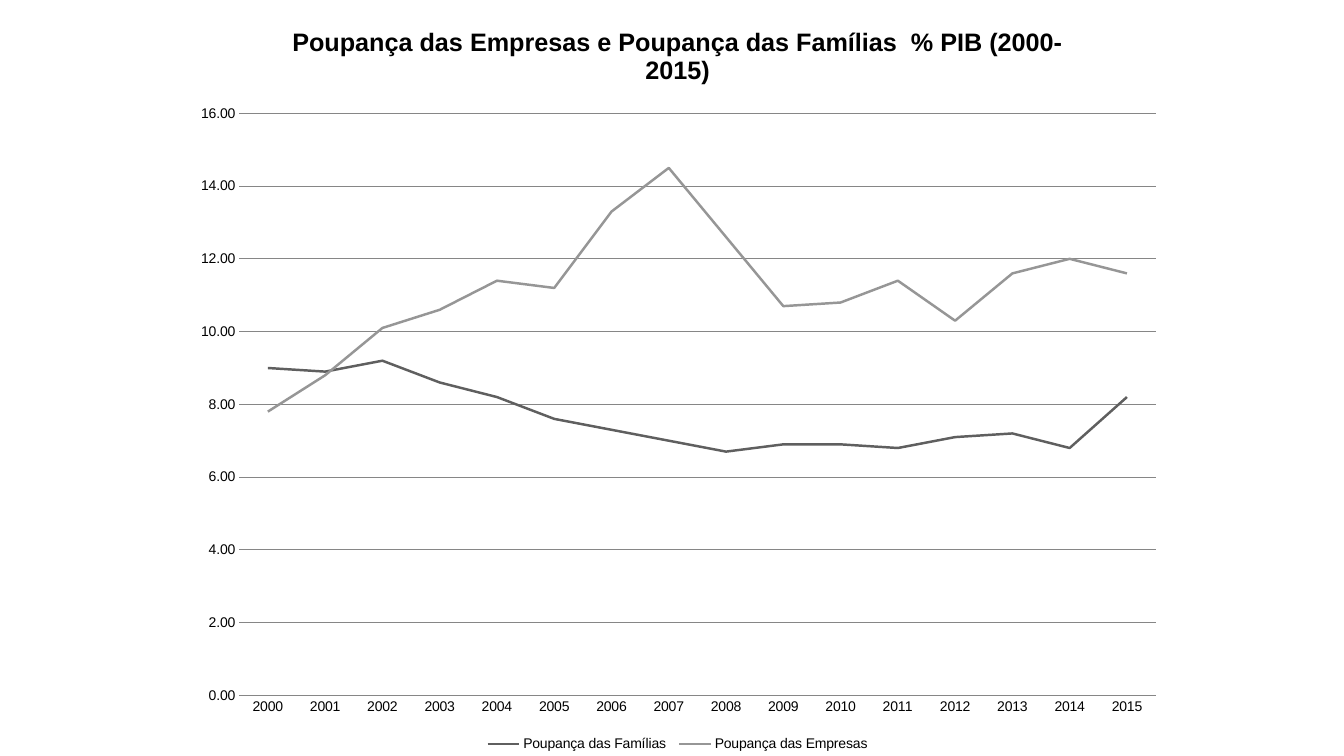
from dataclasses import dataclass

from lxml.etree import SubElement
from pptx import Presentation
from pptx.chart.axis import CategoryAxis, ValueAxis
from pptx.chart.chart import Chart
from pptx.chart.data import CategoryChartData
from pptx.chart.series import LineSeries
from pptx.dml.color import RGBColor
from pptx.dml.line import LineFormat
from pptx.enum.chart import XL_CHART_TYPE, XL_LEGEND_POSITION, XL_MARKER_STYLE, XL_TICK_MARK
from pptx.oxml.ns import qn
from pptx.text.text import Font
from pptx.util import Inches, Pt

BLACK = "000000"
GRID_GRAY = "868686"
TITLE = "Poupança das Empresas e Poupança das Famílias  % PIB (2000-2015)"
YEARS = [str(year) for year in range(2000, 2016)]


@dataclass
class Saving:
    name: str
    color: str
    values: list[float]


SAVINGS = [
    Saving("Poupança das Famílias ", "5F5F5F",
           [9, 8.9, 9.2, 8.6, 8.2, 7.6, 7.3, 7, 6.7, 6.9, 6.9, 6.8, 7.1, 7.2, 6.8, 8.2]),
    Saving("Poupança das Empresas", "969696",
           [7.8, 8.8, 10.1, 10.6, 11.4, 11.2, 13.3, 14.5, 12.6, 10.7, 10.8, 11.4, 10.3,
            11.6, 12, 11.6]),
]


def color(hex_value: str) -> RGBColor:
    return RGBColor.from_string(hex_value)


def style_font(font: Font, size: float, bold: bool = False) -> None:
    font.name = "Arial"
    font.size = Pt(size)
    font.bold = bold
    font.color.rgb = color(BLACK)


def style_line(line: LineFormat, hex_value: str, width: float) -> None:
    line.color.rgb = color(hex_value)
    line.width = Pt(width)


def style_axis(axis: CategoryAxis | ValueAxis) -> None:
    axis.major_tick_mark = XL_TICK_MARK.NONE
    axis.minor_tick_mark = XL_TICK_MARK.NONE
    style_font(axis.tick_labels.font, 10)


def style_series(series: LineSeries, saving: Saving) -> None:
    series.smooth = False
    series.marker.style = XL_MARKER_STYLE.NONE
    style_line(series.format.line, saving.color, 1.75)


def place_plot(chart: Chart, left: float, top: float, width: float, height: float) -> None:
    """Set the inner plot area as fractions of the chart."""
    plot_area = chart.element.find(".//" + qn("c:plotArea"))
    layout = plot_area.find(qn("c:layout"))
    if layout is None:
        layout = SubElement(plot_area, qn("c:layout"))
        plot_area.insert(0, layout)
    manual = SubElement(layout, qn("c:manualLayout"))
    settings = {"layoutTarget": "inner", "xMode": "edge", "yMode": "edge",
                "x": left, "y": top, "w": width, "h": height}
    for tag, value in settings.items():
        SubElement(manual, qn(f"c:{tag}")).set("val", str(value))


def main() -> None:
    deck = Presentation()
    deck.slide_width = Inches(13.33)
    deck.slide_height = Inches(7.5)
    page = deck.slides.add_slide(deck.slide_layouts[6])

    # Chart data
    data = CategoryChartData(number_format="0.00")
    data.categories = YEARS
    for saving in SAVINGS:
        data.add_series(saving.name, saving.values)
    chart = page.shapes.add_chart(
        XL_CHART_TYPE.LINE, Inches(1.78), Inches(0), Inches(9.88), Inches(7.5), data).chart
    style_font(chart.font, 10)
    place_plot(chart, 0.06, 0.15, 0.92, 0.77)

    # Title
    chart.has_title = True
    heading = chart.chart_title.text_frame
    heading.text = TITLE
    style_font(heading.paragraphs[0].font, 18, bold=True)

    # Axes
    style_axis(chart.category_axis)
    style_line(chart.category_axis.format.line, GRID_GRAY, 0.75)
    values = chart.value_axis
    style_axis(values)
    values.minimum_scale, values.maximum_scale, values.major_unit = 0, 16, 2
    values.tick_labels.number_format = "0.00"
    values.tick_labels.number_format_is_linked = False
    values.format.line.fill.background()
    style_line(values.major_gridlines.format.line, GRID_GRAY, 0.75)

    # Lines
    plot = chart.plots[0]
    plot.vary_by_categories = False
    for series, saving in zip(plot.series, SAVINGS):
        style_series(series, saving)

    # Legend
    chart.has_legend = True
    chart.legend.position = XL_LEGEND_POSITION.BOTTOM
    chart.legend.include_in_layout = False
    style_font(chart.legend.font, 10)

    deck.save("out.pptx")


if __name__ == "__main__":
    main()
